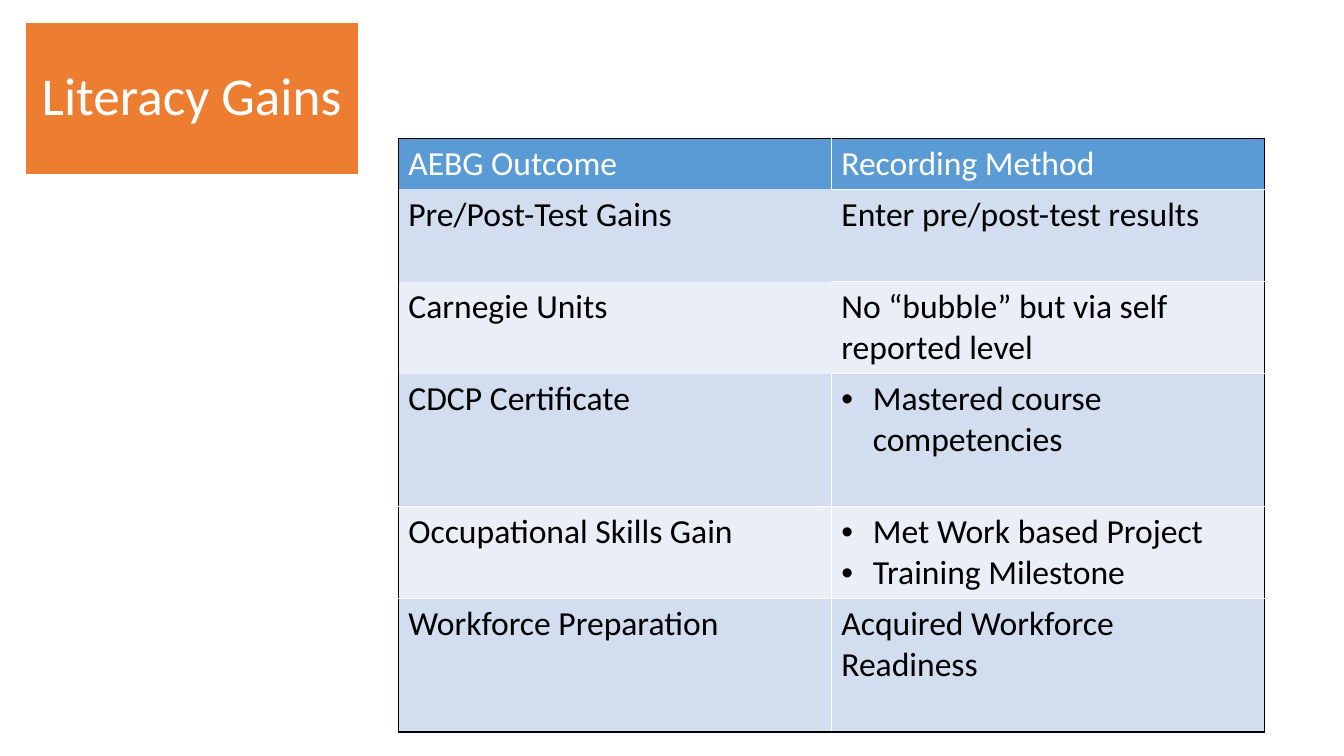
from dataclasses import dataclass

from lxml.etree import SubElement
from pptx import Presentation
from pptx.dml.color import RGBColor
from pptx.enum.shapes import MSO_SHAPE
from pptx.enum.text import MSO_ANCHOR, PP_ALIGN
from pptx.oxml.ns import qn
from pptx.util import Pt


@dataclass(frozen=True)
class Theme:
    font: str = "Calibri"
    title_size: int = 38
    body_size: int = 24
    orange: str = "ED7D31"
    blue: str = "5B9BD5"
    bands: tuple = ("D2DEEF", "EAEFF7")
    white: str = "FFFFFF"
    black: str = "000000"


def rgb(color):
    return RGBColor.from_string(color)


def add_text(p, text, *, font, size, color, align=None, spacing=None, bullet=False):
    r = p.add_run()
    r.text = text
    r.font.name, r.font.size = font, Pt(size)
    r.font.color.rgb = rgb(color)
    if align is not None:
        p.alignment = align
    if spacing is not None:
        p.line_spacing = spacing
    if bullet:
        pPr = p._p.get_or_add_pPr()
        pPr.set("marL", str(Pt(22.5)))
        pPr.set("indent", str(-Pt(22.5)))
        SubElement(pPr, qn("a:buFont"), typeface="Arial")
        SubElement(pPr, qn("a:buChar"), char="•")


def add_border(tcPr, side, color):
    ln = SubElement(tcPr, qn(f"a:ln{side}"), w=str(Pt(1)))
    if color is None:
        SubElement(ln, qn("a:noFill"))
    else:
        fill = SubElement(ln, qn("a:solidFill"))
        SubElement(fill, qn("a:srgbClr"), val=color)


class SlideBuilder:
    def __init__(self, slide, theme):
        self.s, self.theme = slide, theme

    def title_box(self, text, x, y, w, h):
        t = self.theme
        sp = self.s.shapes.add_shape(MSO_SHAPE.RECTANGLE, Pt(x), Pt(y), Pt(w), Pt(h))
        sp.shadow.inherit = False
        sp.fill.solid()
        sp.fill.fore_color.rgb = rgb(t.orange)
        sp.line.color.rgb = rgb(t.white)
        sp.line.width = Pt(1)
        tf = sp.text_frame
        tf.word_wrap = False
        tf.vertical_anchor = MSO_ANCHOR.MIDDLE
        add_text(tf.paragraphs[0], text, font=t.font, size=t.title_size,
                 color=t.white, align=PP_ALIGN.CENTER, spacing=0.9)

    def table(self, rows, x, y, w, line_height, padding):
        heights = [lines * line_height + padding for lines, *_ in rows]
        table = self.s.shapes.add_table(
            len(rows), 2, Pt(x), Pt(y), Pt(w), Pt(sum(heights))).table
        for i, (_, outcome, method) in enumerate(rows):
            table.rows[i].height = Pt(heights[i])
            for j, content in enumerate((outcome, method)):
                self.cell(table.cell(i, j), content, i, j, len(rows))

    def cell(self, cell, content, row, col, row_count):
        t = self.theme

        # Black outside, white inside; the upper left cells have no inner lines
        def rule(i):
            if i in (0, row_count):
                return t.black
            return t.white if col == 1 or i > 3 else None

        divider = None if row in (1, 2) else t.white
        tcPr = cell._tc.get_or_add_tcPr()
        add_border(tcPr, "L", t.black if col == 0 else divider)
        add_border(tcPr, "R", t.black if col == 1 else divider)
        add_border(tcPr, "T", rule(row))
        add_border(tcPr, "B", rule(row + 1))
        cell.fill.solid()
        cell.fill.fore_color.rgb = rgb(t.bands[(row - 1) % 2] if row else t.blue)

        # A list becomes bullets, a string a plain paragraph
        bullet = isinstance(content, list)
        tf = cell.text_frame
        for k, text in enumerate(content if bullet else [content]):
            p = tf.add_paragraph() if k else tf.paragraphs[0]
            add_text(p, text, font=t.font, size=t.body_size,
                     color=t.black if row else t.white, bullet=bullet)


# Height in text lines, outcome, recording method
OUTCOMES = [
    (1, "AEBG Outcome", "Recording Method"),
    (2, "Pre/Post-Test Gains", "Enter pre/post-test results"),
    (2, "Carnegie Units", "No “bubble” but via self reported level"),
    (3, "CDCP Certificate", ["Mastered course competencies"]),
    (2, "Occupational Skills Gain", ["Met Work based Project", "Training Milestone"]),
    (3, "Workforce Preparation", "Acquired Workforce Readiness"),
]


def main():
    prs = Presentation()
    prs.slide_width, prs.slide_height = Pt(960), Pt(540)
    slide = SlideBuilder(prs.slides.add_slide(prs.slide_layouts[6]), Theme())

    # Title
    slide.title_box("Literacy Gains", 18, 16, 238, 108.5)

    # Outcomes table
    slide.table(OUTCOMES, 284.5, 98.8, 618.6, line_height=29.3, padding=7.2)

    prs.save("out.pptx")


if __name__ == "__main__":
    main()
